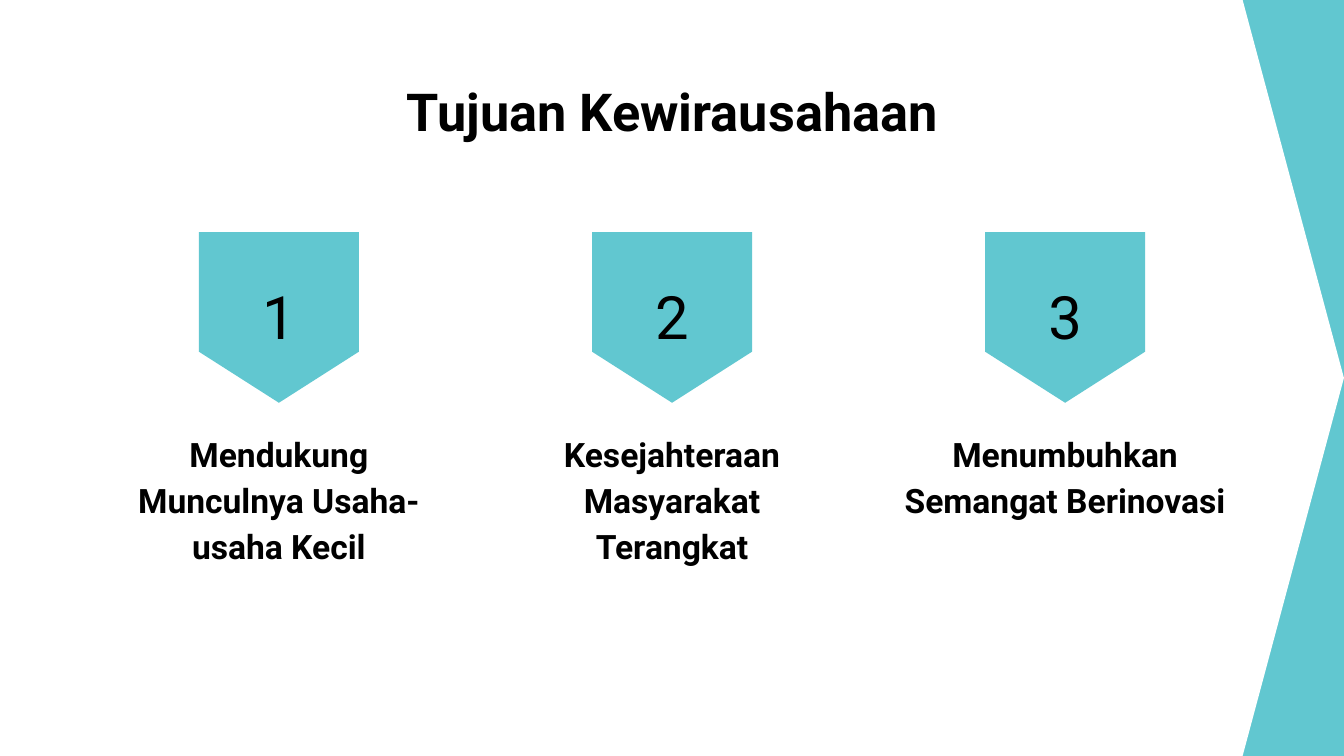
from pptx import Presentation
from pptx.dml.color import RGBColor
from pptx.enum.shapes import MSO_SHAPE
from pptx.enum.text import MSO_ANCHOR, PP_ALIGN
from pptx.util import Pt

COLORS = {"teal": "61C7D0", "panel": "FFFFFF", "text": "000000"}
SLIDE_W, SLIDE_H = 720, 405
INSET = 7.2
COLUMN_W, COLUMN_PITCH = 187, 210.6
BADGE_W, BADGE_H = 85.7, 91.4
NUMBER_SIZE = 42

TITLE_FORMAT = {"size": Pt(28), "bold": True}
NUMBER_FORMAT = {"size": Pt(32), "bold": False}
GOAL_FORMAT = {"size": Pt(18), "bold": True}
GOAL_SPACING = {"line_spacing": 1.15, "space_after": Pt(16)}

GOALS = [
    "Mendukung Munculnya Usaha-usaha Kecil",
    "Kesejahteraan Masyarakat Terangkat",
    "Menumbuhkan Semangat Berinovasi",
]


def set_attributes(target, values):
    for name, value in values.items():
        setattr(target, name, value)


def add_pentagon(slide, box, color, point, rotation=0):
    pentagon = slide.shapes.add_shape(MSO_SHAPE.PENTAGON, *map(Pt, box))
    pentagon.adjustments[0] = point
    pentagon.rotation = rotation
    pentagon.shadow.inherit = False
    pentagon.fill.solid()
    pentagon.fill.fore_color.rgb = RGBColor.from_string(COLORS[color])
    pentagon.line.fill.background()


def add_label(slide, box, text, font_format, spacing=None, anchor=MSO_ANCHOR.TOP):
    frame = slide.shapes.add_textbox(*map(Pt, box)).text_frame
    margins = {f"margin_{side}": Pt(INSET) for side in ("left", "top", "right", "bottom")}
    set_attributes(frame, {"word_wrap": True, "vertical_anchor": anchor, **margins})
    paragraph = frame.paragraphs[0]
    set_attributes(paragraph, {"alignment": PP_ALIGN.CENTER, **(spacing or {})})
    run = paragraph.add_run()
    run.text = text
    set_attributes(run.font, {"name": "Roboto", **font_format})
    run.font.color.rgb = RGBColor.from_string(COLORS["text"])


def add_backdrop(slide, box):
    """White arrow-shaped panel over a teal background."""
    slide.background.fill.solid()
    slide.background.fill.fore_color.rgb = RGBColor.from_string(COLORS["teal"])
    add_pentagon(slide, box, "panel", 0.134)


def add_goal(slide, box, number, goal):
    """Downward badge with its number, and the goal below it."""
    left, top, width, height = box
    center_x, center_y = left + width / 2, top + BADGE_H / 2
    # The badge is turned by 90 degrees, so its length runs down the slide.
    badge_box = (center_x - BADGE_H / 2, center_y - BADGE_W / 2, BADGE_H, BADGE_W)
    add_pentagon(slide, badge_box, "teal", 0.319, rotation=90)
    number_box = (center_x - NUMBER_SIZE / 2, 148, NUMBER_SIZE, NUMBER_SIZE)
    add_label(slide, number_box, str(number), NUMBER_FORMAT, anchor=MSO_ANCHOR.MIDDLE)
    goal_top = top + BADGE_H + 6
    goal_box = (left, goal_top, width, top + height - goal_top)
    add_label(slide, goal_box, goal, GOAL_FORMAT, GOAL_SPACING)


def main():
    presentation = Presentation()
    presentation.slide_width, presentation.slide_height = Pt(SLIDE_W), Pt(SLIDE_H)
    slide = presentation.slides.add_slide(presentation.slide_layouts[6])
    add_backdrop(slide, (0, 0, SLIDE_W, SLIDE_H))
    add_label(slide, (56, 35.3, 608, 45), "Tujuan Kewirausahaan", TITLE_FORMAT)
    first_left = (SLIDE_W - COLUMN_W - COLUMN_PITCH * (len(GOALS) - 1)) / 2
    for index, goal in enumerate(GOALS):
        goal_box = (first_left + index * COLUMN_PITCH, 124.4, COLUMN_W, 142.6)
        add_goal(slide, goal_box, index + 1, goal)
    presentation.save("out.pptx")


if __name__ == "__main__":
    main()
